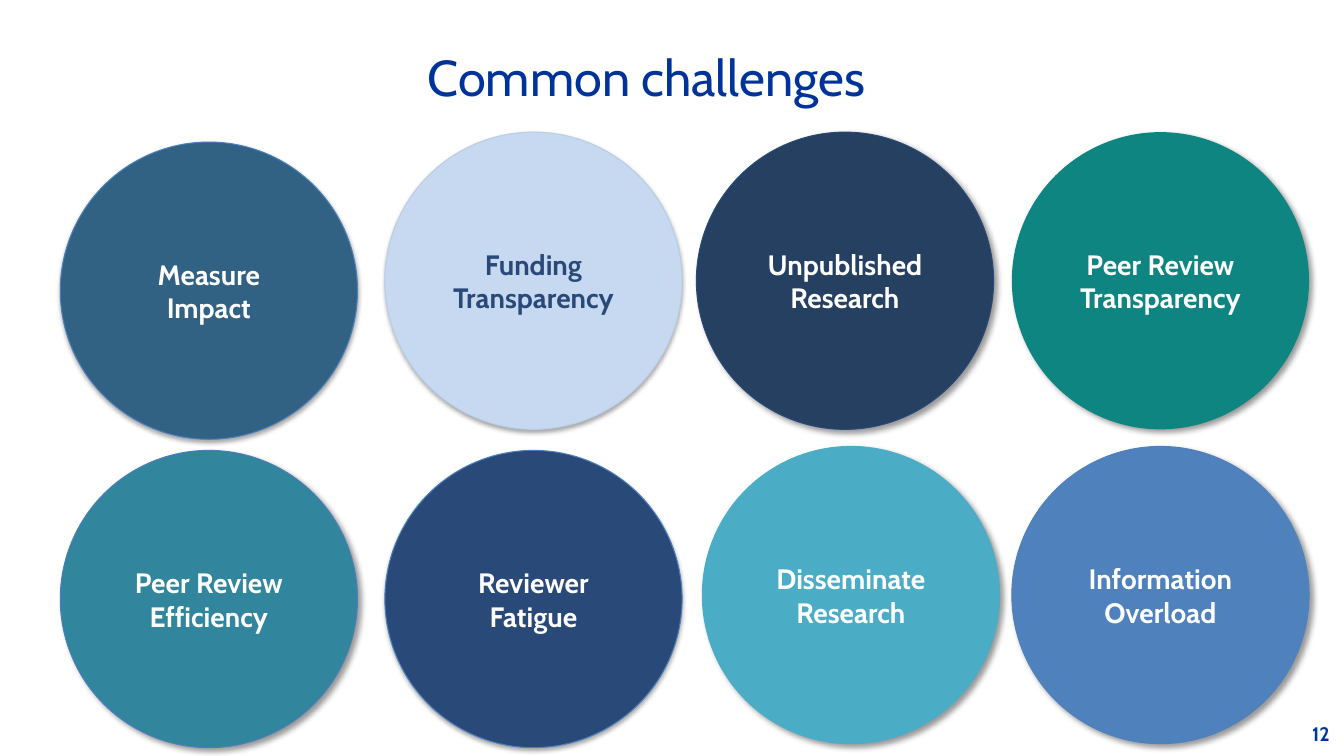
from lxml import etree
from pptx import Presentation
from pptx.dml.color import RGBColor
from pptx.enum.shapes import MSO_SHAPE
from pptx.enum.text import MSO_ANCHOR, PP_ALIGN
from pptx.oxml.ns import qn
from pptx.util import Cm, Pt

OVAL = MSO_SHAPE.OVAL
MIDDLE = MSO_ANCHOR.MIDDLE
CENTER, RIGHT = PP_ALIGN.CENTER, PP_ALIGN.RIGHT
TITLE_ONLY = 5

FONT = "Cabin"
WHITE = RGBColor(0xFF, 0xFF, 0xFF)
ROYAL = RGBColor(0x00, 0x33, 0x99)
NAVY = RGBColor(0x29, 0x49, 0x78)
MIDNIGHT = RGBColor(0x25, 0x40, 0x61)
SLATE = RGBColor(0x31, 0x62, 0x83)
TEAL = RGBColor(0x31, 0x85, 0x9C)
GREEN = RGBColor(0x0F, 0x85, 0x82)
AQUA = RGBColor(0x4B, 0xAC, 0xC6)
BLUE = RGBColor(0x4F, 0x81, 0xBD)
EDGE = RGBColor(0x4B, 0x7E, 0xBC)
PALE = RGBColor(0xC6, 0xD9, 0xF1)
PALE_EDGE = RGBColor(0xB9, 0xCD, 0xE5)

DIAMETER = Cm(7.49)
SOFT = {"blur": 3.1, "distance": 1.8, "angle": 90, "opacity": 35}
DEEP = {"blur": 4, "distance": 3, "angle": 45, "opacity": 40}

CHALLENGES = [
    ("Measure\nImpact", 1.52, 3.58, SLATE, EDGE, WHITE, SOFT),
    ("Funding Transparency", 9.7, 3.33, PALE, PALE_EDGE, NAVY, SOFT),
    ("Unpublished Research", 17.55, 3.33, MIDNIGHT, NAVY, WHITE, DEEP),
    ("Peer Review Transparency", 25.5, 3.33, GREEN, None, WHITE, DEEP),
    ("Peer Review Efficiency", 1.52, 11.35, TEAL, EDGE, WHITE, DEEP),
    ("Reviewer Fatigue", 9.7, 11.35, NAVY, EDGE, WHITE, SOFT),
    ("Disseminate Research", 17.7, 11.25, AQUA, AQUA, WHITE, DEEP),
    ("Information Overload", 25.5, 11.25, BLUE, BLUE, WHITE, DEEP),
]


def write(frame, text, size, color, align, bold=False):
    frame.word_wrap = True
    frame.text = text
    for para in frame.paragraphs:
        para.alignment = align
        para.font.name = FONT
        para.font.size = Pt(size)
        para.font.bold = bold
        para.font.color.rgb = color


def add_shadow(shape, blur, distance, angle, opacity):
    shape.shadow.inherit = False
    effects = shape._element.spPr.find(qn("a:effectLst"))
    shadow = etree.SubElement(
        effects, qn("a:outerShdw"), blurRad=str(Pt(blur)), dist=str(Pt(distance)),
        dir=str(angle * 60000), rotWithShape="0")
    color = etree.SubElement(shadow, qn("a:srgbClr"), val="000000")
    etree.SubElement(color, qn("a:alpha"), val=str(opacity * 1000))


def add_title(page, text):
    title = page.shapes.title
    title.left, title.top = Cm(3.91), Cm(0.53)
    title.width, title.height = Cm(24.77), Cm(2.79)
    title.text_frame.vertical_anchor = MIDDLE
    write(title.text_frame, text, 36, ROYAL, CENTER)


def add_page_number(page, number):
    box = page.shapes.add_textbox(Cm(31.88), Cm(18.06), Cm(1.88), Cm(0.86))
    write(box.text_frame, number, 14, ROYAL, RIGHT, bold=True)


def add_circle(page, text, left, top, fill, edge, ink, shadow):
    circle = page.shapes.add_shape(OVAL, Cm(left), Cm(top), DIAMETER, DIAMETER)
    circle.fill.solid()
    circle.fill.fore_color.rgb = fill
    if edge is None:
        circle.line.fill.background()
    else:
        circle.line.color.rgb = edge
        circle.line.width = Pt(0.75)
    add_shadow(circle, **shadow)
    circle.text_frame.vertical_anchor = MIDDLE
    write(circle.text_frame, text, 20, ink, CENTER, bold=True)


def main():
    deck = Presentation()
    deck.slide_width, deck.slide_height = Cm(33.87), Cm(19.05)
    page = deck.slides.add_slide(deck.slide_layouts[TITLE_ONLY])
    add_title(page, "Common challenges")
    add_page_number(page, "12")
    for challenge in CHALLENGES:
        add_circle(page, *challenge)
    deck.save("out.pptx")


if __name__ == "__main__":
    main()
